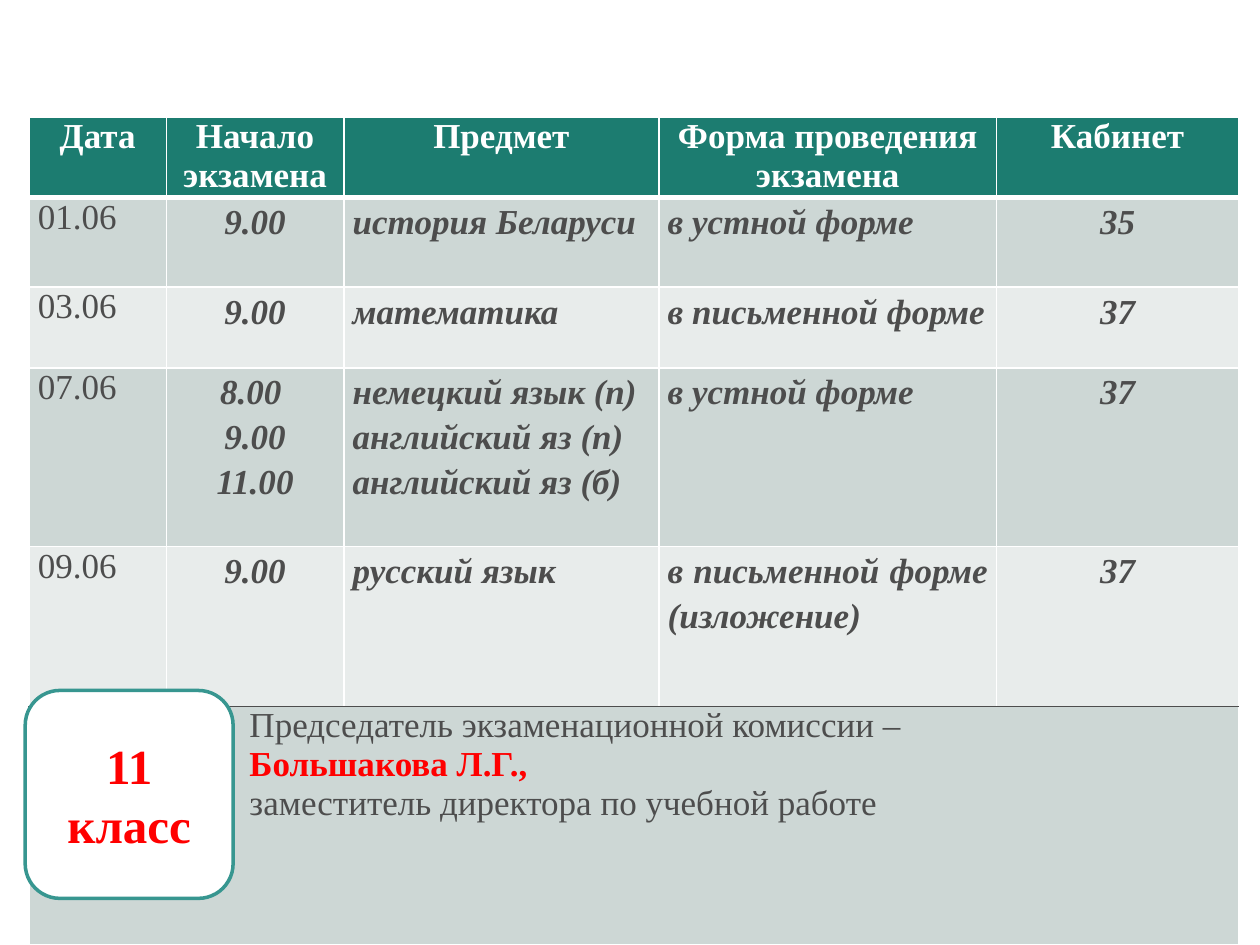
import pptx
import pptx.util
import pptx.dml.color
import pptx.enum.shapes
import pptx.enum.text
import pptx.oxml
import pptx.oxml.ns

Inches = pptx.util.Inches
ALIGN = pptx.enum.text.PP_ALIGN

THEME = {
    "font": "Times New Roman",
    "table_size": 20,
    "badge_size": 28,
    "header": "1C7C70",
    "bands": ["CDD7D5", "E8ECEB"],
    "white": "FFFFFF",
    "ink": "4D4D4D",
    "accent": "FF0000",
    "outline": "379690",
}

HEADINGS = ["Дата", "Начало экзамена", "Предмет", "Форма проведения экзамена", "Кабинет"]
EXAMS = [
    ["01.06", "9.00", "история Беларуси", "в устной форме", "35"],
    ["03.06", "9.00", "математика", "в письменной форме", "37"],
    ["07.06", "8.00 \n9.00\n11.00",
     "немецкий язык (п)\nанглийский яз (п)\nанглийский яз (б)", "в устной форме", "37"],
    ["09.06", "9.00", "русский язык", "в письменной форме (изложение)", "37"],
]
CHAIR = [
    "Председатель экзаменационной комиссии –",
    "Большакова Л.Г.,",
    "заместитель директора по учебной работе",
]
BADGE = "11 класс"

COLUMN_WIDTHS = [1.09, 1.41, 2.5, 2.68, 1.92]
ROW_HEIGHTS = [0.64, 0.71, 0.64, 1.42, 1.27, 1.89]
CENTERED_COLUMNS = {1, 4}
CELL_MARGIN = 0.07
CHAIR_MARGIN = 1.75


def rgb(name):
    return pptx.dml.color.RGBColor.from_string(name)


def style_para(para, size, color, align, bold=False, italic=False, spacing=None):
    para.alignment = align
    if spacing:
        para.line_spacing = spacing
    for span in para.runs:
        span.font.name = THEME["font"]
        span.font.size = pptx.util.Pt(size)
        span.font.color.rgb = rgb(color)
        span.font.bold = bold
        span.font.italic = italic


def style_cell(cell, fill, top, bottom, margin_left=CELL_MARGIN):
    borders = {"L": (THEME["white"], 1), "R": (THEME["white"], 1), "T": top, "B": bottom}
    properties = cell._tc.get_or_add_tcPr()
    for side, (color, width) in borders.items():
        properties.append(pptx.oxml.parse_xml(
            f'<a:ln{side} {pptx.oxml.ns.nsdecls("a")} w="{pptx.util.Pt(width)}">'
            f'<a:solidFill><a:srgbClr val="{color}"/></a:solidFill></a:ln{side}>'))
    cell.fill.solid()
    cell.fill.fore_color.rgb = rgb(fill)
    cell.margin_left = Inches(margin_left)
    cell.margin_right = Inches(CELL_MARGIN)
    cell.margin_top = cell.margin_bottom = 0


def add_schedule(page):
    rows = [HEADINGS] + EXAMS
    chair_row = len(rows)
    frame = page.shapes.add_table(
        chair_row + 1, len(HEADINGS), Inches(0.23), Inches(0.93),
        Inches(sum(COLUMN_WIDTHS)), Inches(sum(ROW_HEIGHTS)))
    table = frame.table
    for column, width in zip(table.columns, COLUMN_WIDTHS):
        column.width = Inches(width)
    for row, height in zip(table.rows, ROW_HEIGHTS):
        row.height = Inches(height)

    thin = (THEME["white"], 1)
    thick = (THEME["white"], 3)
    dark = (THEME["ink"], 1)
    edges = [thin, thick] + [thin] * (len(EXAMS) - 1) + [dark, thin]
    fills = [THEME["header"]] + [THEME["bands"][i % 2] for i in range(chair_row)]

    for r, texts in enumerate(rows):
        for c, text in enumerate(texts):
            cell = table.cell(r, c)
            style_cell(cell, fills[r], edges[r], edges[r + 1])
            cell.text_frame.text = text
            is_header = r == 0
            is_detail = not is_header and c > 0
            centered = is_header or c in CENTERED_COLUMNS
            for para in cell.text_frame.paragraphs:
                style_para(
                    para, THEME["table_size"],
                    THEME["white"] if is_header else THEME["ink"],
                    ALIGN.CENTER if centered else ALIGN.JUSTIFY,
                    bold=is_header or is_detail, italic=is_detail,
                    spacing=1.15 if is_detail else None)

    for c in range(len(HEADINGS)):
        style_cell(table.cell(chair_row, c), fills[-1], edges[-2], edges[-1], CHAIR_MARGIN)
    cell = table.cell(chair_row, 0)
    cell.merge(table.cell(chair_row, len(HEADINGS) - 1))
    cell.text_frame.text = "\n".join(CHAIR)
    for i, para in enumerate(cell.text_frame.paragraphs):
        is_name = i == 1
        style_para(para, THEME["table_size"], THEME["accent"] if is_name else THEME["ink"],
                   ALIGN.JUSTIFY, bold=is_name)


def add_badge(page):
    badge = page.shapes.add_shape(
        pptx.enum.shapes.MSO_SHAPE.ROUNDED_RECTANGLE,
        Inches(0.2), Inches(5.48), Inches(1.65), Inches(1.65))
    badge.shadow.inherit = False
    badge.fill.solid()
    badge.fill.fore_color.rgb = rgb(THEME["white"])
    badge.line.color.rgb = rgb(THEME["outline"])
    badge.line.width = pptx.util.Pt(2)
    badge.text_frame.word_wrap = True
    badge.text_frame.vertical_anchor = pptx.enum.text.MSO_ANCHOR.MIDDLE
    badge.text_frame.text = BADGE
    style_para(badge.text_frame.paragraphs[0], THEME["badge_size"], THEME["accent"],
               ALIGN.CENTER, bold=True)


def main():
    deck = pptx.Presentation()
    deck.slide_width = Inches(10)
    deck.slide_height = Inches(7.5)
    page = deck.slides.add_slide(deck.slide_layouts[6])
    add_schedule(page)
    add_badge(page)
    deck.save("out.pptx")


if __name__ == "__main__":
    main()
